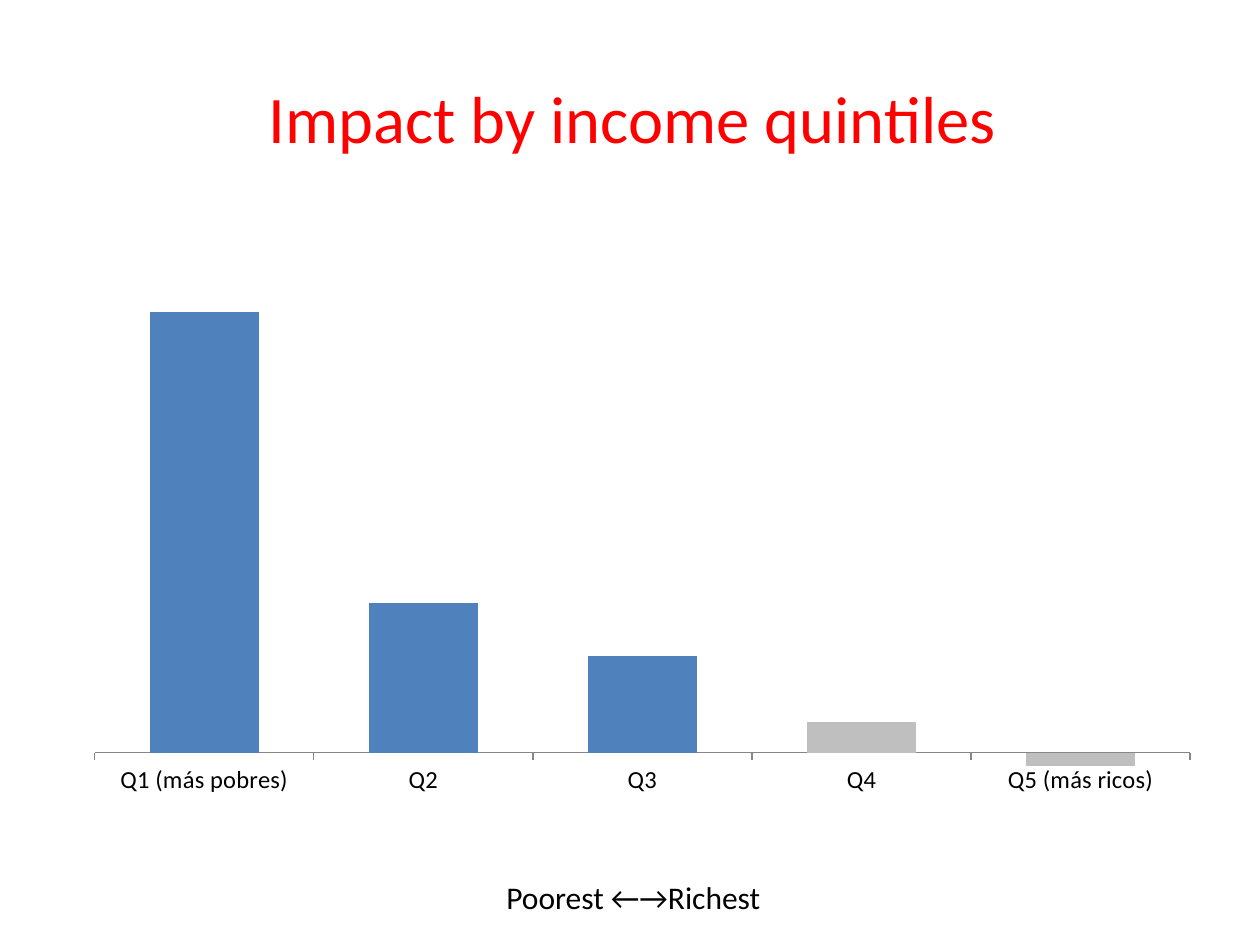
from lxml import etree
from pptx import Presentation, util as u
from pptx.chart.data import CategoryChartData
from pptx.dml.color import RGBColor
from pptx.enum import chart as charts, text
from pptx.oxml import ns

RED = RGBColor(0xFF, 0x00, 0x00)
BLACK = RGBColor(0x00, 0x00, 0x00)
BLUE = RGBColor(0x4F, 0x81, 0xBD)
GREY = RGBColor(0xBF, 0xBF, 0xBF)
AXIS_GREY = RGBColor(0x86, 0x86, 0x86)

QUINTILES = {"Q1 (más pobres)": 100, "Q2": 34, "Q3": 22, "Q4": 7, "Q5 (más ricos)": -3}
GREY_QUINTILES = (3, 4)
PLOT_AREA = {"x": 0.028, "y": 0.034, "w": 0.966, "h": 0.922}


def set_format(target, **values):
    for name, value in values.items():
        setattr(target, name, value)


class SlideBuilder:
    """Holds the style and the current slide; lengths are inches on a 10 by 7.5 grid."""

    font_name = "Calibri"

    def __init__(self, presentation):
        self.slide = presentation.slides.add_slide(presentation.slide_layouts[6])

    def style_font(self, font, size, color):
        set_format(font, name=self.font_name, size=u.Pt(size), bold=False)
        font.color.rgb = color

    def add_text(self, box, wording, size, color, **paragraph_format):
        shape = self.slide.shapes.add_textbox(*map(u.Inches, box))
        set_format(shape.text_frame, word_wrap=True,
                   vertical_anchor=text.MSO_ANCHOR.MIDDLE)
        paragraph = shape.text_frame.paragraphs[0]
        set_format(paragraph, **paragraph_format)
        run = paragraph.add_run()
        run.text = wording
        self.style_font(run.font, size, color)

    def add_column_chart(self, box, values, grey_points):
        data = CategoryChartData()
        data.categories = list(values)
        data.add_series("Series 1", list(values.values()))
        chart = self.slide.shapes.add_chart(
            charts.XL_CHART_TYPE.COLUMN_CLUSTERED, *map(u.Inches, box), data).chart
        set_format(chart, has_legend=False, has_title=False)
        self.style_font(chart.font, 10, BLACK)

        plot = chart.plots[0]
        set_format(plot, gap_width=100, overlap=-10, vary_by_categories=False)
        series = plot.series[0]
        series.invert_if_negative = False
        fills = [series.format.fill] + [series.points[i].format.fill for i in grey_points]
        for fill, color in zip(fills, [BLUE] + [GREY] * len(grey_points)):
            fill.solid()
            fill.fore_color.rgb = color

        set_format(chart.value_axis, visible=False, has_major_gridlines=False,
                   minimum_scale=-14.5, maximum_scale=116)
        axis = chart.category_axis
        set_format(axis, has_major_gridlines=False,
                   major_tick_mark=charts.XL_TICK_MARK.OUTSIDE,
                   tick_label_position=charts.XL_TICK_LABEL_POSITION.NEXT_TO_AXIS)
        self.style_font(axis.tick_labels.font, 14, BLACK)
        axis.format.line.color.rgb = AXIS_GREY
        axis.format.line.width = u.Pt(0.75)
        self.fix_plot_area(chart, PLOT_AREA)

    @staticmethod
    def fix_plot_area(chart, shares):
        """Place the inner plot area by shares of the chart's size."""
        plot_area = chart._chartSpace.chart.plotArea
        for old_layout in plot_area.findall(ns.qn("c:layout")):
            plot_area.remove(old_layout)
        layout = etree.Element(ns.qn("c:layout"))
        plot_area.insert(0, layout)
        manual = etree.SubElement(layout, ns.qn("c:manualLayout"))
        settings = {"layoutTarget": "inner", "xMode": "edge", "yMode": "edge", **shares}
        for name, value in settings.items():
            etree.SubElement(manual, ns.qn(f"c:{name}")).set("val", str(value))


def main():
    presentation = Presentation()
    set_format(presentation, slide_width=u.Inches(10), slide_height=u.Inches(7.5))
    builder = SlideBuilder(presentation)
    builder.add_text((0.02, 0.3, 10, 1.25), "Impact by income quintiles", 38, RED,
                     alignment=text.PP_ALIGN.CENTER)
    builder.add_column_chart((0.5, 1.75, 9, 4.95), QUINTILES, GREY_QUINTILES)
    builder.add_text((3.92, 6.92, 2.67, 0.4), "Poorest ←→Richest", 18, BLACK)
    presentation.save("out.pptx")


if __name__ == "__main__":
    main()
